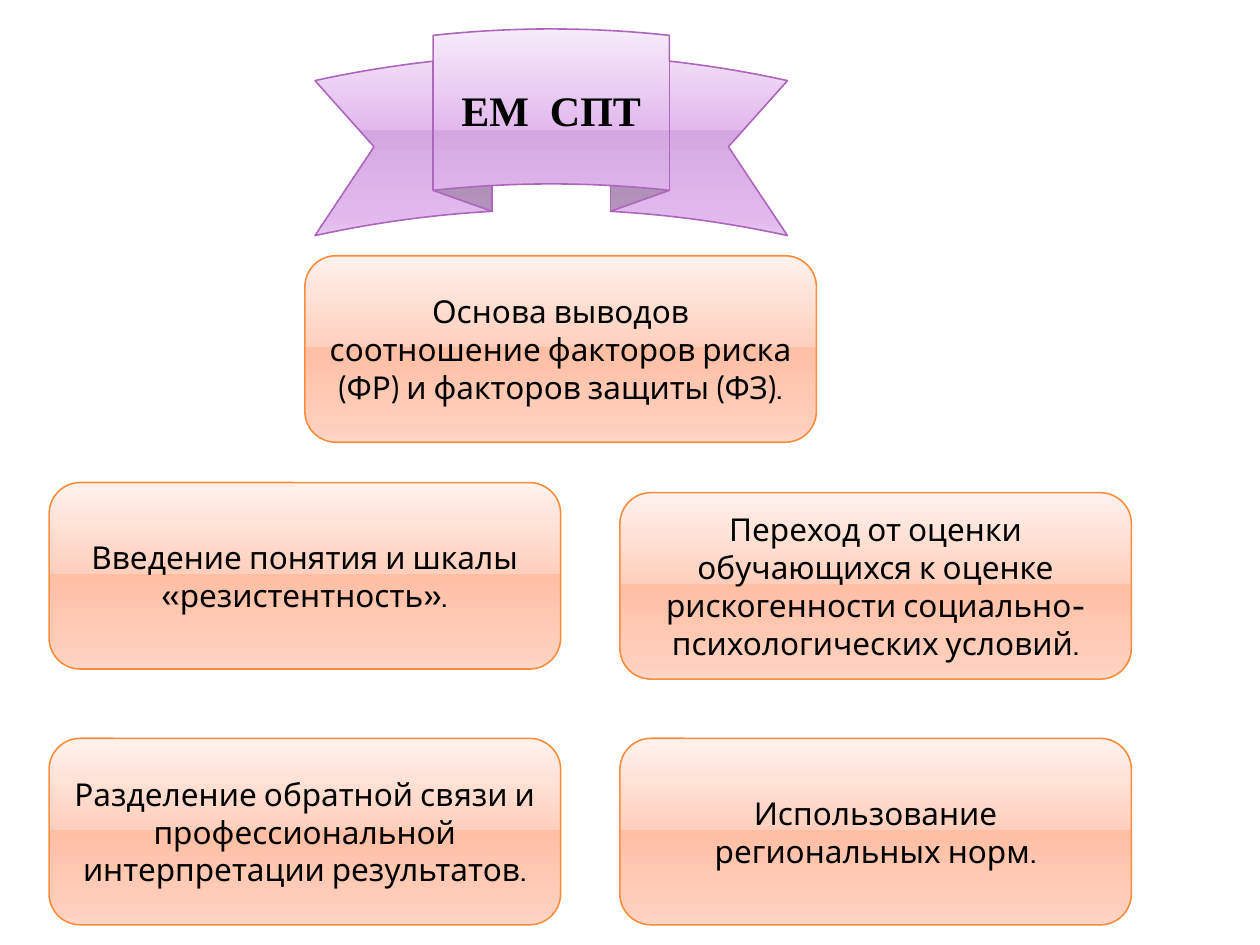
from lxml.etree import SubElement
from pptx import Presentation
from pptx.dml.color import RGBColor
from pptx.enum.shapes import MSO_SHAPE as Shape
from pptx.enum.text import MSO_ANCHOR as Anchor, PP_ALIGN as Align
from pptx.oxml.ns import qn
from pptx.util import Inches, Pt

SLIDE_W, SLIDE_H = 10, 7.5
CARD_W, CARD_H = 4.06, 1.48
LEFT_COL, RIGHT_COL = 0.39, 4.92
BOTTOM_ROW = 5.86
STOPS = (0, 49, 49, 92, 100)

BLACK = RGBColor(0x00, 0x00, 0x00)
ORANGE = RGBColor(0xFA, 0x8D, 0x3D)
PURPLE = RGBColor(0xAC, 0x66, 0xBB)
PEACH_TOP = RGBColor(0xFF, 0xF2, 0xEE)
PEACH_MID = RGBColor(0xFF, 0xCF, 0xBD)
PEACH_DEEP = RGBColor(0xFF, 0xBF, 0xA5)
PEACH_END = RGBColor(0xFF, 0xD7, 0xC8)
LILAC_TOP = RGBColor(0xF7, 0xEB, 0xFB)
LILAC_MID = RGBColor(0xE2, 0xB9, 0xED)
LILAC_DEEP = RGBColor(0xD5, 0xA7, 0xE2)
LILAC_END = RGBColor(0xE6, 0xC6, 0xEF)
PEACH = (PEACH_TOP, PEACH_MID, PEACH_DEEP, PEACH_MID, PEACH_END)
LILAC = (LILAC_TOP, LILAC_MID, LILAC_DEEP, LILAC_MID, LILAC_END)

BASIS = "Основа выводов соотношение факторов риска (ФР) и факторов защиты (ФЗ)."
CHANGES = (
    (LEFT_COL, 3.83, "Введение понятия и шкалы «резистентность»."),
    (RIGHT_COL, 3.91, "Переход от оценки обучающихся к оценке рискогенности "
                      "социально-психологических условий."),
    (LEFT_COL, BOTTOM_ROW, "Разделение обратной связи и профессиональной "
                           "интерпретации результатов."),
    (RIGHT_COL, BOTTOM_ROW, "Использование региональных норм."),
)


def fill_glossy(shape, colours):
    shape.fill.gradient()
    shape.fill.gradient_angle = 270
    stop_list = next(shape._element.spPr.iter(qn("a:gsLst")))
    for stop in list(stop_list):
        stop_list.remove(stop)
    for share, colour in zip(STOPS, colours):
        stop = SubElement(stop_list, qn("a:gs"), pos=str(share * 1000))
        SubElement(stop, qn("a:srgbClr"), val=str(colour))


def add_glossy_label(slide, outline, box, text, colours, border, font_name, size, bold=False):
    label = slide.shapes.add_shape(outline, *(Inches(length) for length in box))
    label.shadow.inherit = False
    fill_glossy(label, colours)
    label.line.color.rgb = border
    label.line.width = Pt(0.9)
    frame = label.text_frame
    frame.word_wrap = True
    frame.vertical_anchor = Anchor.MIDDLE
    paragraph = frame.paragraphs[0]
    paragraph.text = text
    paragraph.alignment = Align.CENTER
    font = paragraph.font
    font.name, font.size, font.bold = font_name, Pt(size), bold
    font.color.rgb = BLACK


def add_title_ribbon(slide, box):
    add_glossy_label(slide, Shape.CURVED_UP_RIBBON, box, "ЕМ  СПТ",
                     LILAC, PURPLE, "Times New Roman", 24, bold=True)


def add_card(slide, left, top, text):
    add_glossy_label(slide, Shape.ROUNDED_RECTANGLE, (left, top, CARD_W, CARD_H),
                     text, PEACH, ORANGE, "Cabin", 18)


def main():
    deck = Presentation()
    deck.slide_width, deck.slide_height = Inches(SLIDE_W), Inches(SLIDE_H)
    slide = deck.slides.add_slide(deck.slide_layouts[6])
    add_card(slide, 2.42, 2.03, BASIS)
    for left, top, text in CHANGES:
        add_card(slide, left, top, text)
    add_title_ribbon(slide, (SLIDE_W / 4, 0.23, SLIDE_W * 3 / 8, 1.64))
    deck.save("out.pptx")


if __name__ == "__main__":
    main()
